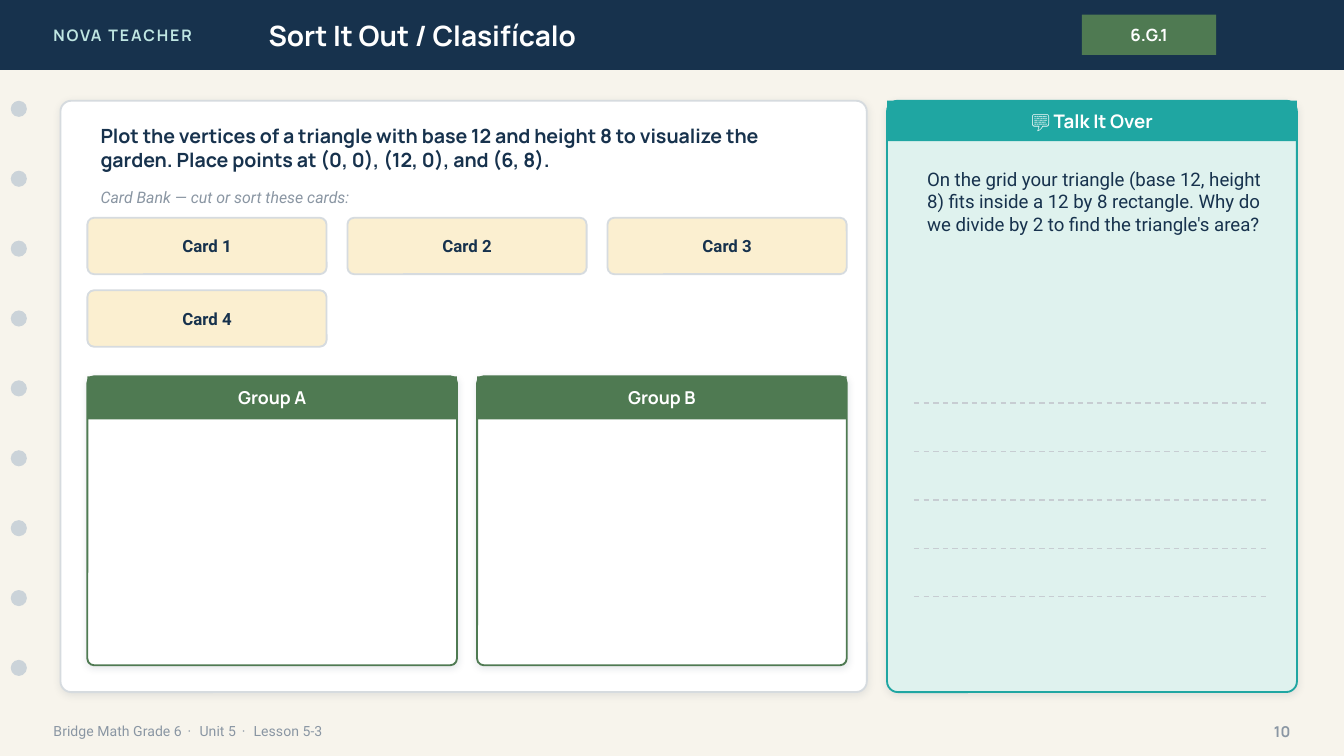
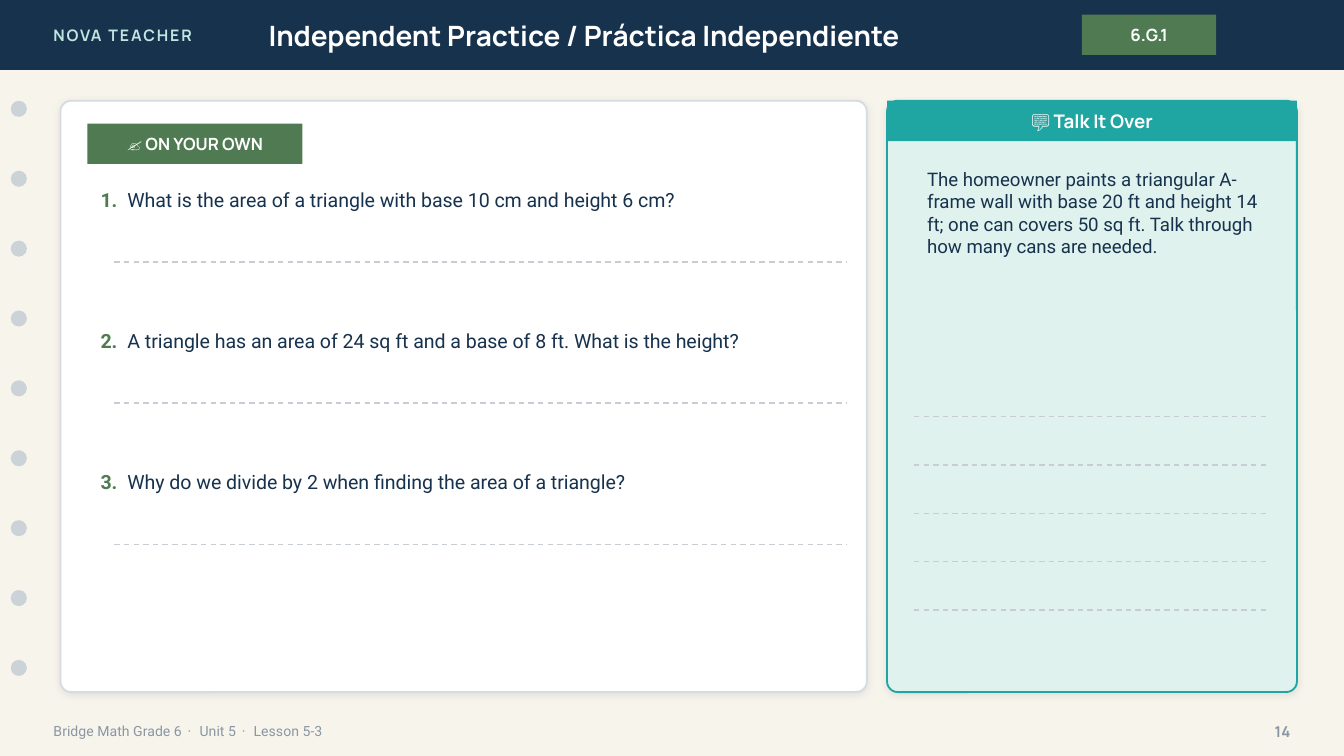
"""Build two maths lesson slides: a card sort and independent practice."""
from lxml import etree
from pptx import Presentation
from pptx.dml.color import RGBColor
from pptx.enum import dml, shapes, text
from pptx.oxml import ns
from pptx.util import Inches, Pt

NAVY, CREAM, WHITE, GREEN, TEAL = "17324D", "F7F4EC", "FFFFFF", "4F7A52", "1FA6A2"
MINT, AQUA, SAND, GREY = "DFF2EE", "BFE6E2", "FBEFD0", "8A96A3"
BORDER, DOT, RULE, SHADOW = "D6DBDF", "CBD3D9", "C7CDD2", "1C2E42"
HEADING, BODY = "Manrope", "Roboto"
RECT = shapes.MSO_SHAPE.RECTANGLE
ROUNDED = shapes.MSO_SHAPE.ROUNDED_RECTANGLE
OVAL = shapes.MSO_SHAPE.OVAL
MIDDLE, TOP = text.MSO_ANCHOR.MIDDLE, text.MSO_ANCHOR.TOP
LEFT, CENTER, RIGHT = text.PP_ALIGN.LEFT, text.PP_ALIGN.CENTER, text.PP_ALIGN.RIGHT

BRAND = "NOVA TEACHER"
STANDARD = "6.G.1"
FOOTER = ["Bridge Math Grade 6", "Unit 5", "Lesson 5-3"]
TALK_HEADING = "💬 Talk It Over"

SORT = {
    "title": "Sort It Out / Clasifícalo",
    "page": "10",
    "task": "Plot the vertices of a triangle with base 12 and height 8 to visualize "
            "the garden. Place points at (0, 0), (12, 0), and (6, 8).",
    "hint": "Card Bank — cut or sort these cards:",
    "cards": ["Card 1", "Card 2", "Card 3", "Card 4"],
    "groups": ["Group A", "Group B"],
    "talk": "On the grid your triangle (base 12, height 8) fits inside a 12 by 8 "
            "rectangle. Why do we divide by 2 to find the triangle's area?",
    "talk_height": 1.5,
    "first_rule": 3,
}
PRACTICE = {
    "title": "Independent Practice / Práctica Independiente",
    "page": "14",
    "badge": "✍️ ON YOUR OWN",
    "questions": [
        "What is the area of a triangle with base 10 cm and height 6 cm?",
        "A triangle has an area of 24 sq ft and a base of 8 ft. What is the height?",
        "Why do we divide by 2 when finding the area of a triangle?",
    ],
    "talk": "The homeowner paints a triangular A-frame wall with base 20 ft and height "
            "14 ft; one can covers 50 sq ft. Talk through how many cans are needed.",
    "talk_height": 1.7,
    "first_rule": 3.1,
}

MARGIN, CONTENT_WIDTH = 0.65, 5.65
PANEL_TOP, PANEL_HEIGHT = 0.75, 4.4


def color(value):
    return RGBColor.from_string(value)


def set_font(font, size, name, ink, bold=False, italic=False):
    font.size, font.name, font.bold, font.italic = Pt(size), name, bold, italic
    font.color.rgb = color(ink)


def set_spacing(run, points):
    run._r.get_or_add_rPr().set("spc", str(round(points * 100)))


def write(shape, words, style, align=LEFT, anchor=MIDDLE):
    frame = shape.text_frame
    frame.word_wrap = True
    frame.vertical_anchor = anchor
    paragraph = frame.paragraphs[0]
    paragraph.text = words
    paragraph.alignment = align
    set_font(paragraph.font, *style)
    return paragraph


def add_text(slide, box, words, style, align=LEFT, anchor=MIDDLE):
    return write(slide.shapes.add_textbox(*map(Inches, box)), words, style, align, anchor)


def add_block(slide, kind, box, fill, line=None, radius=0):
    shape = slide.shapes.add_shape(kind, *map(Inches, box))
    shape.shadow.inherit = False
    shape.fill.solid()
    shape.fill.fore_color.rgb = color(fill)
    if line:
        shape.line.color.rgb = color(line)
        shape.line.width = Pt(1)
    else:
        shape.line.fill.background()
    if radius:
        shape.adjustments[0] = radius / min(box[2:])
    return shape


def add_label(slide, box, fill, words, size):
    write(add_block(slide, RECT, box, fill), words, (size, HEADING, WHITE, True), CENTER)


def add_panel(slide, box, fill, line, radius):
    panel = add_block(slide, ROUNDED, box, fill, line, radius)
    effects = panel._element.spPr.find(ns.qn("a:effectLst"))
    shadow = etree.SubElement(effects, ns.qn("a:outerShdw"), blurRad=str(Pt(4)),
                              dist=str(Pt(1)), dir=str(90 * 60000), rotWithShape="0")
    tint = etree.SubElement(shadow, ns.qn("a:srgbClr"), val=SHADOW)
    etree.SubElement(tint, ns.qn("a:alpha"), val="10000")


def add_rule(slide, left, right, top):
    rule = slide.shapes.add_connector(
        shapes.MSO_CONNECTOR.STRAIGHT, Inches(left), Inches(top), Inches(right), Inches(top))
    rule.line.color.rgb = color(RULE)
    rule.line.width = Pt(0.75)
    rule.line.dash_style = dml.MSO_LINE.DASH
    etree.SubElement(rule._element.spPr, ns.qn("a:effectLst"))


def add_footer(slide, page):
    first, *others = FOOTER
    paragraph = add_text(slide, (0.3, 5.3, 7, 0.28), first, (7.5, BODY, GREY))
    for part in others:
        separator = paragraph.add_run()
        separator.text = " · "
        set_spacing(separator, 1.25)
        paragraph.add_run().text = part
    add_text(slide, (9.2, 5.3, 0.5, 0.28), page, (8, HEADING, GREY, True), RIGHT)


def add_base(presentation, content):
    slide = presentation.slides.add_slide(presentation.slide_layouts[6])
    slide.background.fill.solid()
    slide.background.fill.fore_color.rgb = color(CREAM)
    add_block(slide, RECT, (0, 0, 10, 0.52), NAVY)
    brand = add_text(slide, (0.3, 0, 2.4, 0.52), BRAND, (8.5, HEADING, AQUA, True))
    set_spacing(brand.runs[0], 1)
    add_text(slide, (1.9, 0, 5.6, 0.52), content["title"], (15, HEADING, WHITE, True))
    add_label(slide, (8.05, 0.11, 1, 0.3), GREEN, STANDARD, 9)
    for hole in range(9):
        add_block(slide, OVAL, (0.08, PANEL_TOP + hole * 0.52, 0.12, 0.12), DOT)
    add_footer(slide, content["page"])
    add_panel(slide, (0.45, PANEL_TOP, 6, PANEL_HEIGHT), WHITE, BORDER, 0.08)
    return slide


def add_talk(slide, content):
    left, width = 6.6, 3.05
    add_panel(slide, (left, PANEL_TOP, width, PANEL_HEIGHT), MINT, TEAL, 0.08)
    add_label(slide, (left, PANEL_TOP, width, 0.3), TEAL, TALK_HEADING, 10)
    add_text(slide, (6.8, 1.2, 2.7, content["talk_height"]), content["talk"],
             (10, BODY, NAVY), anchor=TOP)
    for row in range(5):
        add_rule(slide, 6.8, 9.45, content["first_rule"] + row * 0.36)


def build_sort(presentation):
    slide = add_base(presentation, SORT)
    add_text(slide, (MARGIN, 0.9, 5.6, 0.4), SORT["task"], (10.5, HEADING, NAVY, True))
    add_text(slide, (MARGIN, 1.35, 5.6, 0.24), SORT["hint"], (8.5, BODY, GREY, False, True))
    columns, card_width = 3, 1.78
    card_step = (CONTENT_WIDTH - card_width) / (columns - 1)
    for index, words in enumerate(SORT["cards"]):
        row, column = divmod(index, columns)
        box = (MARGIN + column * card_step, 1.62 + row * 0.54, card_width, 0.42)
        card = add_block(slide, ROUNDED, box, SAND, BORDER, 0.05)
        write(card, words, (9, BODY, NAVY, True), CENTER)
    group_width = 2.75
    for column, words in enumerate(SORT["groups"]):
        left = MARGIN + column * (CONTENT_WIDTH - group_width)
        add_panel(slide, (left, 2.8, group_width, 2.15), WHITE, GREEN, 0.05)
        add_label(slide, (left, 2.8, group_width, 0.32), GREEN, words, 9.5)
    add_talk(slide, SORT)


def build_practice(presentation):
    slide = add_base(presentation, PRACTICE)
    add_label(slide, (MARGIN, 0.92, 1.6, 0.3), GREEN, PRACTICE["badge"], 9)
    for index, question in enumerate(PRACTICE["questions"]):
        top = 1.35 + index * 1.05
        paragraph = add_text(slide, (MARGIN, top, CONTENT_WIDTH, 0.5), f"{index + 1}.\t",
                             (10.5, BODY, GREEN, True), anchor=TOP)
        properties = paragraph._p.get_or_add_pPr()
        properties.set("marL", str(Inches(0.2)))
        properties.set("indent", str(-Inches(0.2)))
        run = paragraph.add_run()
        run.text = question
        set_font(run.font, 10.5, BODY, NAVY)
        add_rule(slide, 0.85, MARGIN + CONTENT_WIDTH, top + 0.6)
    add_talk(slide, PRACTICE)


def main():
    presentation = Presentation()
    presentation.slide_width = Inches(10)
    presentation.slide_height = presentation.slide_width * 9 // 16
    build_sort(presentation)
    build_practice(presentation)
    presentation.save("out.pptx")


if __name__ == "__main__":
    main()
